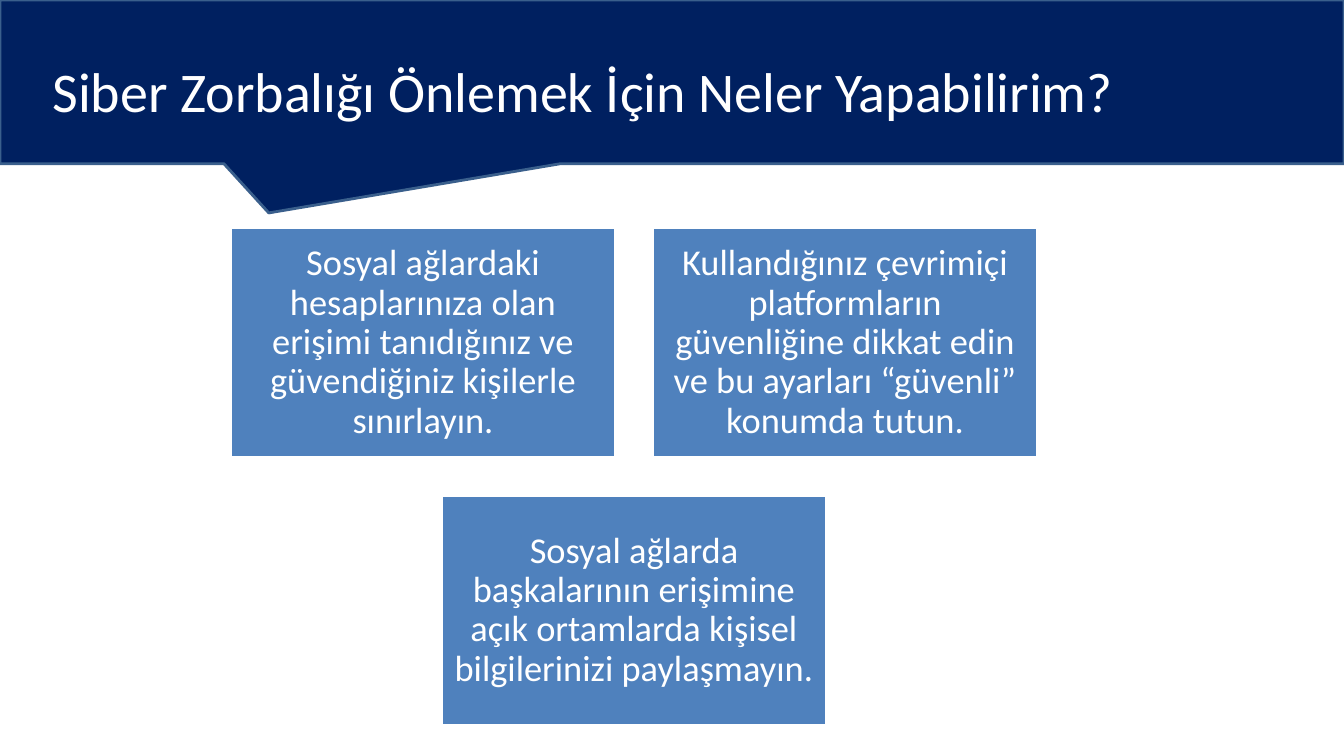
"""Build the slide on preventing cyberbullying."""
from dataclasses import dataclass

from pptx import Presentation
from pptx.dml.color import RGBColor
from pptx.enum.shapes import MSO_SHAPE
from pptx.enum.text import MSO_ANCHOR, MSO_AUTO_SIZE, PP_ALIGN
from pptx.shapes.autoshape import Shape
from pptx.slide import Slide
from pptx.util import Emu, Pt

EMU_PER_PX = 9525


@dataclass(frozen=True)
class Theme:
    font: str = "Calibri"
    title_size: int = 40
    card_size: int = 26
    line_width: int = 2
    text: str = "FFFFFF"
    banner: str = "002060"
    banner_line: str = "3A5F8C"
    card: str = "4F81BD"
    card_line: str = "FFFFFF"


@dataclass(frozen=True)
class Box:
    left: int
    top: int
    width: int
    height: int

    def emu(self) -> tuple[Emu, Emu, Emu, Emu]:
        return tuple(px(n) for n in (self.left, self.top, self.width, self.height))


@dataclass(frozen=True)
class Card:
    column: float
    row: int
    text: str


THEME = Theme()
SLIDE = Box(0, 0, 1280, 720)
BANNER = Box(0, 0, 1280, 156)
TITLE_BOX = Box(0, 35, 1110, 102)
FIRST_CARD = Box(220, 217, 366, 219)
CARD_GAP = 36
TITLE = "Siber Zorbalığı Önlemek İçin Neler Yapabilirim?"
CARDS = (
    Card(0, 0, "Sosyal ağlardaki hesaplarınıza olan erişimi tanıdığınız ve "
               "güvendiğiniz kişilerle sınırlayın."),
    Card(1, 0, "Kullandığınız çevrimiçi platformların güvenliğine dikkat edin "
               "ve bu ayarları “güvenli” konumda tutun."),
    Card(0.5, 1, "Sosyal ağlarda başkalarının erişimine açık ortamlarda kişisel "
                 "bilgilerinizi paylaşmayın."),
)


def px(n: int) -> Emu:
    return Emu(n * EMU_PER_PX)


def add_panel(s: Slide, kind: MSO_SHAPE, box: Box, fill: str, line: str) -> Shape:
    sp = s.shapes.add_shape(kind, *box.emu())
    sp.shadow.inherit = False
    sp.fill.solid()
    sp.fill.fore_color.rgb = RGBColor.from_string(fill)
    sp.line.color.rgb = RGBColor.from_string(line)
    sp.line.width = Pt(THEME.line_width)
    return sp


def write(sp: Shape, text: str, size: int, inset_x: int, inset_y: int,
          spacing: float) -> None:
    tf = sp.text_frame
    tf.word_wrap = True
    tf.auto_size = MSO_AUTO_SIZE.NONE
    tf.vertical_anchor = MSO_ANCHOR.MIDDLE
    tf.margin_left = tf.margin_right = px(inset_x)
    tf.margin_top = tf.margin_bottom = px(inset_y)
    p = tf.paragraphs[0]
    p.alignment = PP_ALIGN.CENTER
    p.line_spacing = spacing
    r = p.add_run()
    r.text = text
    r.font.name = THEME.font
    r.font.size = Pt(size)
    r.font.color.rgb = RGBColor.from_string(THEME.text)


def add_header(s: Slide) -> None:
    banner = add_panel(s, MSO_SHAPE.RECTANGULAR_CALLOUT, BANNER,
                       THEME.banner, THEME.banner_line)
    banner.adjustments[0] = -0.3
    banner.adjustments[1] = 0.8
    title = s.shapes.title
    title.left, title.top, title.width, title.height = TITLE_BOX.emu()
    write(title, TITLE, THEME.title_size, 12, 6, 1.0)
    title.element.addprevious(banner.element)


def add_card(s: Slide, card: Card) -> None:
    first = FIRST_CARD
    box = Box(first.left + round(card.column * (first.width + CARD_GAP)),
              first.top + card.row * (first.height + CARD_GAP),
              first.width, first.height)
    sp = add_panel(s, MSO_SHAPE.RECTANGLE, box, THEME.card, THEME.card_line)
    write(sp, card.text, THEME.card_size, 10, 10, 0.9)


def main() -> None:
    prs = Presentation()
    prs.slide_width, prs.slide_height = px(SLIDE.width), px(SLIDE.height)
    s = prs.slides.add_slide(prs.slide_layouts[5])
    add_header(s)
    for card in CARDS:
        add_card(s, card)
    prs.save("out.pptx")


if __name__ == "__main__":
    main()
